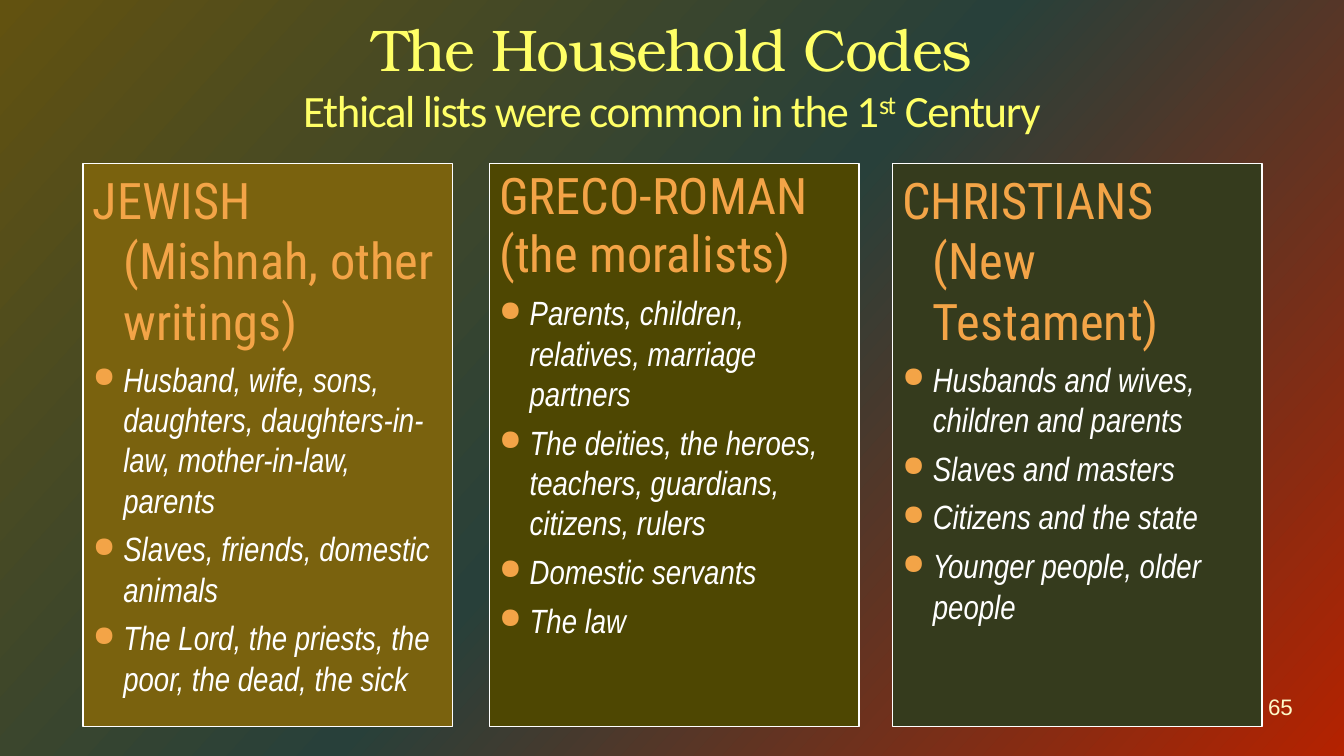
from copy import deepcopy

from lxml.etree import SubElement
from pptx import Presentation
from pptx.dml.color import RGBColor
from pptx.enum.shapes import MSO_SHAPE
from pptx.enum.text import MSO_ANCHOR, PP_ALIGN
from pptx.oxml.ns import qn
from pptx.util import Pt

PX = 9525
INDENT = 29

YELLOW = RGBColor(0xFF, 0xFF, 0x66)
CREAM = RGBColor(0xFE, 0xFA, 0xC9)
ORANGE = RGBColor(0xF3, 0xA4, 0x47)
WHITE = RGBColor(0xFF, 0xFF, 0xFF)
OCHRE = RGBColor(0x7A, 0x62, 0x0E)
OLIVE = RGBColor(0x4E, 0x47, 0x02)
MOSS = RGBColor(0x35, 0x3B, 0x1D)
BACKGROUND = [
    (0, RGBColor(0x62, 0x52, 0x10)),
    (0.5, RGBColor(0x28, 0x40, 0x3A)),
    (1, RGBColor(0xB4, 0x22, 0x00)),
]

COLUMNS = [
    (79, OCHRE, ["JEWISH (Mishnah, other writings)"], [
        "Husband, wife, sons, daughters, daughters-in-law, mother-in-law, parents",
        "Slaves, friends, domestic animals",
        "The Lord, the priests, the poor, the dead, the sick",
    ]),
    (466, OLIVE, ["GRECO-ROMAN", "(the moralists)"], [
        "Parents, children, relatives, marriage partners",
        "The deities, the heroes, teachers, guardians, citizens, rulers",
        "Domestic servants",
        "The law",
    ]),
    (850, MOSS, ["CHRISTIANS (New Testament)"], [
        "Husbands and wives, children and parents",
        "Slaves and masters",
        "Citizens and the state",
        "Younger people, older people",
    ]),
]


def to_emu(box):
    return [length * PX for length in box]


def add_span(para, text, font, size, color, italic=False):
    span = para.add_run()
    span.text = text
    span.font.name = font
    span.font.size = Pt(size)
    span.font.color.rgb = color
    if italic:
        span.font.italic = True
    return span


def add_text_box(page, box, anchor):
    frame = page.shapes.add_textbox(*to_emu(box)).text_frame
    frame.word_wrap = True
    frame.vertical_anchor = anchor
    para = frame.paragraphs[0]
    para.alignment = PP_ALIGN.CENTER
    return frame, para


def paint_background(page):
    fill = page.background.fill
    fill.gradient()
    fill.gradient_angle = 360 - 42
    stop_list = page.element.find(".//" + qn("a:gsLst"))
    stop_list.insert(1, deepcopy(stop_list[0]))
    for stop, (position, color) in zip(fill.gradient_stops, BACKGROUND):
        stop.position = position
        stop.color.rgb = color


def add_title(page, box):
    _, para = add_text_box(page, box, MSO_ANCHOR.BOTTOM)
    spans = [add_span(para, "The Household Codes", "TeX Gyre Bonum", 42, YELLOW)]
    para.add_line_break()
    for text in ("Ethical lists were common in the 1", "st", " Century"):
        spans.append(add_span(para, text, "Calibri", 32, YELLOW))
    for span in spans:
        span.font._element.set("spc", "-100")
    spans[2].font._element.set("baseline", "30000")


def add_bullet(para):
    properties = para._p.get_or_add_pPr()
    color = SubElement(properties, qn("a:buClr"))
    SubElement(color, qn("a:srgbClr"), val=str(ORANGE))
    SubElement(properties, qn("a:buSzPct"), val="85000")
    SubElement(properties, qn("a:buChar"), char="●")


def add_column(page, box, color, headings, items):
    panel = page.shapes.add_shape(MSO_SHAPE.RECTANGLE, *to_emu(box))
    panel.shadow.inherit = False
    panel.fill.solid()
    panel.fill.fore_color.rgb = color
    panel.line.color.rgb = WHITE
    panel.line.width = Pt(1)
    frame = panel.text_frame
    frame.word_wrap = True
    frame.vertical_anchor = MSO_ANCHOR.TOP

    for index, text in enumerate(headings + items):
        para = frame.add_paragraph() if index else frame.paragraphs[0]
        para.alignment = PP_ALIGN.LEFT
        properties = para._p.get_or_add_pPr()
        properties.set("marL", str(INDENT * PX))
        properties.set("indent", str(-INDENT * PX))
        if index < len(headings):
            if len(headings) > 1:
                para.line_spacing = 0.95
            add_span(para, text, "Roboto Condensed", 36, ORANGE)
        else:
            add_bullet(para)
            para.space_before = Pt(6)
            add_span(para, text, "Arial Narrow", 24, WHITE, italic=True)


def add_page_number(page, box):
    frame, para = add_text_box(page, box, MSO_ANCHOR.MIDDLE)
    frame.margin_left = frame.margin_right = 0
    frame.margin_top = frame.margin_bottom = 0
    add_span(para, "65", "Arial", 16, CREAM)


def main():
    deck = Presentation()
    deck.slide_width, deck.slide_height = to_emu((1280, 720))
    page = deck.slides.add_slide(deck.slide_layouts[6])
    paint_background(page)
    add_title(page, (64, 7, 1152, 128))
    for left, color, headings, items in COLUMNS:
        add_column(page, (left, 156, 352, 536), color, headings, items)
    add_page_number(page, (1177, 649, 85, 48))
    deck.save("out.pptx")


if __name__ == "__main__":
    main()
